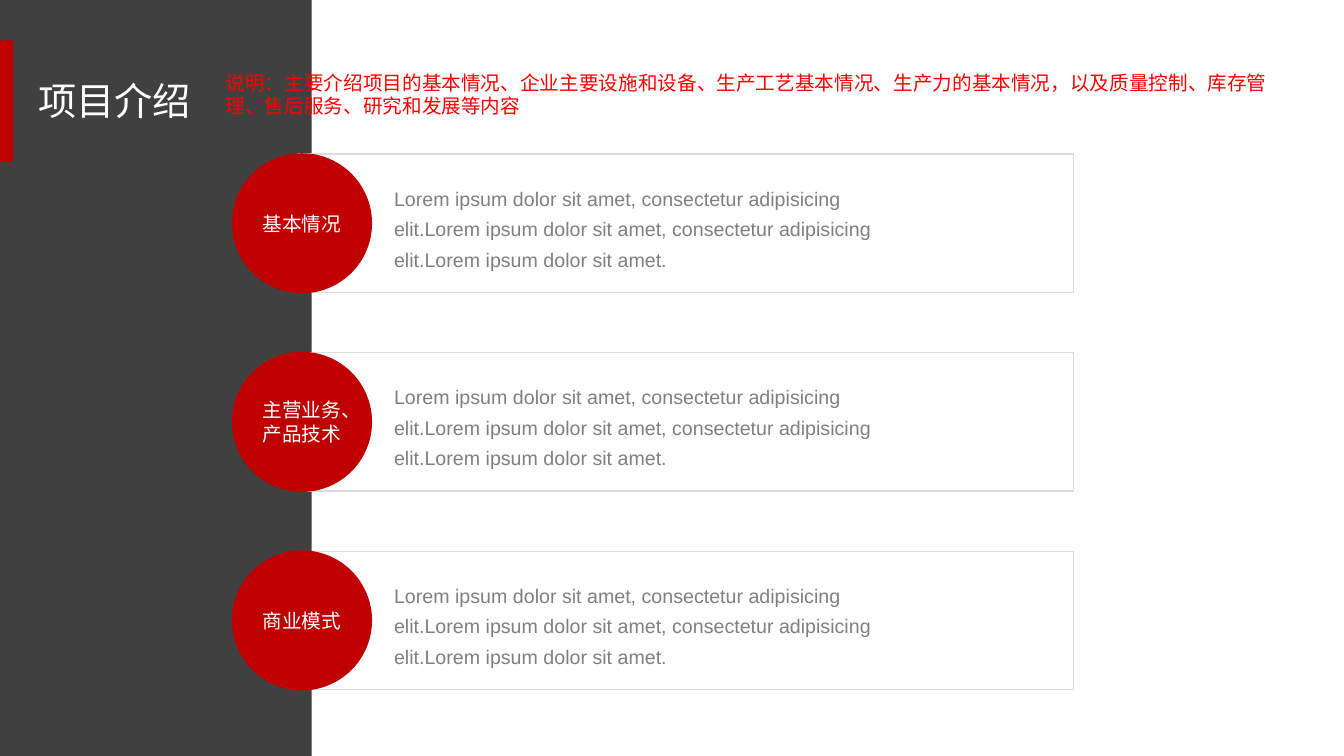
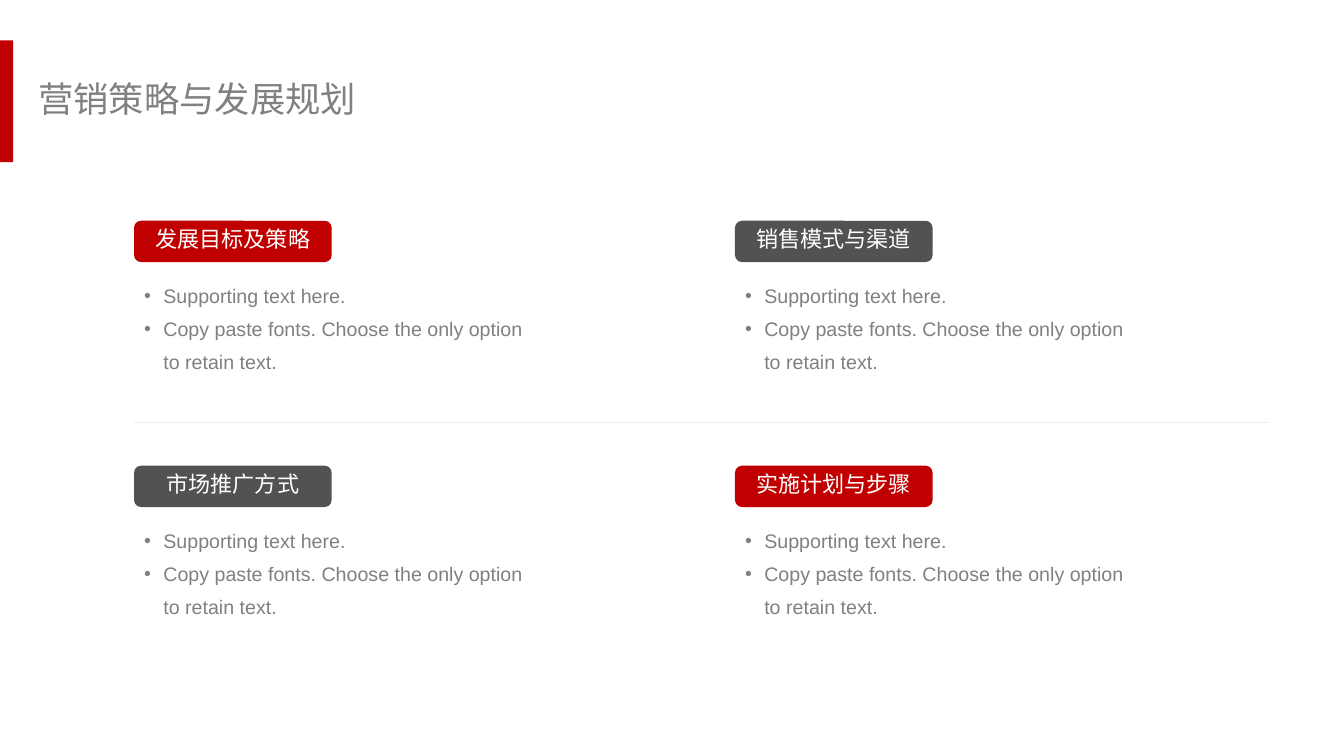
import lxml.etree
import pptx
import pptx.dml.color
import pptx.enum.shapes
import pptx.enum.text
import pptx.oxml.ns
import pptx.util
from dataclasses import dataclass

Inches, Pt = pptx.util.Inches, pptx.util.Pt
PP_ALIGN, MSO_ANCHOR = pptx.enum.text.PP_ALIGN, pptx.enum.text.MSO_ANCHOR
MSO_SHAPE = pptx.enum.shapes.MSO_SHAPE
qn = pptx.oxml.ns.qn

# Shared look
SLIDE_W, SLIDE_H = 13.33, 7.5
FONT = "Arial"
RED, DARK, SLATE = "C00000", "404040", "525252"
GREY, WHITE, NOTE_RED = "808080", "FFFFFF", "FF0000"
FRAME, RULE = "DBDBDB", "EDEDED"
BODY_PT = 14
TITLE_ONLY, COMPARISON = 5, 4


@dataclass
class Box:
    left: float
    top: float
    width: float
    height: float

    def emu(self) -> tuple:
        return tuple(Inches(v) for v in (self.left, self.top, self.width, self.height))


@dataclass
class TextStyle:
    size: float
    color: str
    align: PP_ALIGN = PP_ALIGN.LEFT
    anchor: MSO_ANCHOR = MSO_ANCHOR.TOP
    spacing: float = 1.0
    bullet: bool = False


@dataclass
class Topic:
    heading: str
    fill: str
    col: int
    row: int


def rgb(color: str):
    return pptx.dml.color.RGBColor.from_string(color)


def add_bullet(p) -> None:
    pPr = p._p.get_or_add_pPr()
    pPr.set("marL", str(Inches(0.19)))
    pPr.set("indent", str(-Inches(0.19)))
    lxml.etree.SubElement(pPr, qn("a:buFont")).set("typeface", FONT)
    lxml.etree.SubElement(pPr, qn("a:buChar")).set("char", "•")


def write(sp, text: str, style: TextStyle) -> None:
    """Fill a shape with text, one paragraph per line, and format it."""
    tf = sp.text_frame
    tf.text = text
    tf.word_wrap = True
    tf.auto_size = pptx.enum.text.MSO_AUTO_SIZE.NONE
    tf.vertical_anchor = style.anchor
    for p in tf.paragraphs:
        p.alignment = style.align
        p.line_spacing = style.spacing
        p.space_before = Pt(0)
        if style.bullet:
            add_bullet(p)
        for r in p.runs:
            r.font.name = FONT
            r.font.size = Pt(style.size)
            r.font.bold = False
            r.font.color.rgb = rgb(style.color)


def add_block(slide, kind: MSO_SHAPE, box: Box, fill: str, line: str = ""):
    sp = slide.shapes.add_shape(kind, *box.emu())
    sp.shadow.inherit = False
    sp.fill.solid()
    sp.fill.fore_color.rgb = rgb(fill)
    if line:
        sp.line.color.rgb = rgb(line)
        sp.line.width = Pt(1)
    else:
        sp.line.fill.background()
    return sp


def add_text(slide, box: Box, text: str, style: TextStyle) -> None:
    write(slide.shapes.add_textbox(*box.emu()), text, style)


def place(sp, box: Box) -> None:
    sp.left, sp.top, sp.width, sp.height = box.emu()


def add_header(slide, text: str, size: float, color: str) -> None:
    """Red tab on the left edge and the title, kept above earlier shapes."""
    add_block(slide, MSO_SHAPE.RECTANGLE, Box(0, 0.4, 0.13, 1.21), RED)
    title = slide.shapes.title
    place(title, Box(0.28, 0.72, 3.51, 0.57))
    write(title, text, TextStyle(size, color))
    slide.shapes._spTree.append(title._element)


# Slide 1: project introduction
SECTIONS = ["基本情况", "主营业务、\n产品技术", "商业模式"]
SECTION_TEXT = (
    "Lorem ipsum dolor sit amet, consectetur adipisicing "
    "elit.Lorem ipsum dolor sit amet, consectetur adipisicing "
    "elit.Lorem ipsum dolor sit amet."
)
NOTE = (
    "说明：主要介绍项目的基本情况、企业主要设施和设备、生产工艺基本情况、"
    "生产力的基本情况，以及质量控制、库存管理、售后服务、研究和发展等内容"
)


def build_project(prs) -> None:
    slide = prs.slides.add_slide(prs.slide_layouts[TITLE_ONLY])
    add_block(slide, MSO_SHAPE.RECTANGLE, Box(0, 0, 3.09, SLIDE_H), DARK)
    add_header(slide, "项目介绍", 27.3, WHITE)

    label = TextStyle(BODY_PT, WHITE, PP_ALIGN.CENTER, MSO_ANCHOR.MIDDLE)
    body = TextStyle(BODY_PT, GREY, anchor=MSO_ANCHOR.MIDDLE, spacing=1.3)
    for row, name in enumerate(SECTIONS):
        top = 1.52 + 1.97 * row
        add_block(slide, MSO_SHAPE.RECTANGLE, Box(2.95, top + 0.01, 7.7, 1.37), WHITE, FRAME)
        circle = add_block(slide, MSO_SHAPE.OVAL, Box(2.3, top, 1.39, 1.39), RED)
        write(circle, name, label)
        add_text(slide, Box(3.81, top + 0.04, 5.08, 1.35), SECTION_TEXT, body)

    add_text(slide, Box(2.14, 0.65, 10.55, 0.57), NOTE, TextStyle(BODY_PT, NOTE_RED))


# Slide 2: marketing strategy, a grid of two columns and two rows
TOPICS = [
    Topic("发展目标及策略", RED, 0, 0),
    Topic("销售模式与渠道", SLATE, 1, 0),
    Topic("市场推广方式", SLATE, 0, 1),
    Topic("实施计划与步骤", RED, 1, 1),
]
TOPIC_TEXT = "Supporting text here.\nCopy paste fonts. Choose the only option to retain text."
GRID_LEFT, GRID_TOP, COL_STEP, ROW_STEP = 1.33, 2.19, 5.96, 2.43


def add_rule(slide, left: float, right: float, y: float) -> None:
    line = slide.shapes.add_connector(
        pptx.enum.shapes.MSO_CONNECTOR.STRAIGHT,
        Inches(left), Inches(y), Inches(right), Inches(y),
    )
    line.line.color.rgb = rgb(RULE)
    line.line.width = Pt(0.5)
    lxml.etree.SubElement(line._element.spPr, qn("a:effectLst"))


def build_marketing(prs) -> None:
    slide = prs.slides.add_slide(prs.slide_layouts[COMPARISON])
    add_header(slide, "营销策略与发展规划", 25.2, GREY)
    add_rule(slide, GRID_LEFT, 12.59, 4.19)

    heading = TextStyle(15.8, WHITE, PP_ALIGN.CENTER)
    bullets = TextStyle(BODY_PT, GREY, spacing=1.4, bullet=True)
    bodies = [ph for ph in slide.placeholders if ph.placeholder_format.idx > 0]
    for topic, ph in zip(TOPICS, bodies):
        left = GRID_LEFT + COL_STEP * topic.col
        top = GRID_TOP + ROW_STEP * topic.row
        tag = add_block(slide, MSO_SHAPE.ROUNDED_RECTANGLE, Box(left, top, 1.96, 0.41), topic.fill)
        write(tag, topic.heading, heading)
        tag.text_frame.margin_top = Inches(0.03)
        place(ph, Box(left, top + 0.48, 4.17, 1.12))
        write(ph, TOPIC_TEXT, bullets)


def main() -> None:
    prs = pptx.Presentation()
    prs.slide_width, prs.slide_height = Inches(SLIDE_W), Inches(SLIDE_H)
    build_project(prs)
    build_marketing(prs)
    prs.save("out.pptx")


if __name__ == "__main__":
    main()
